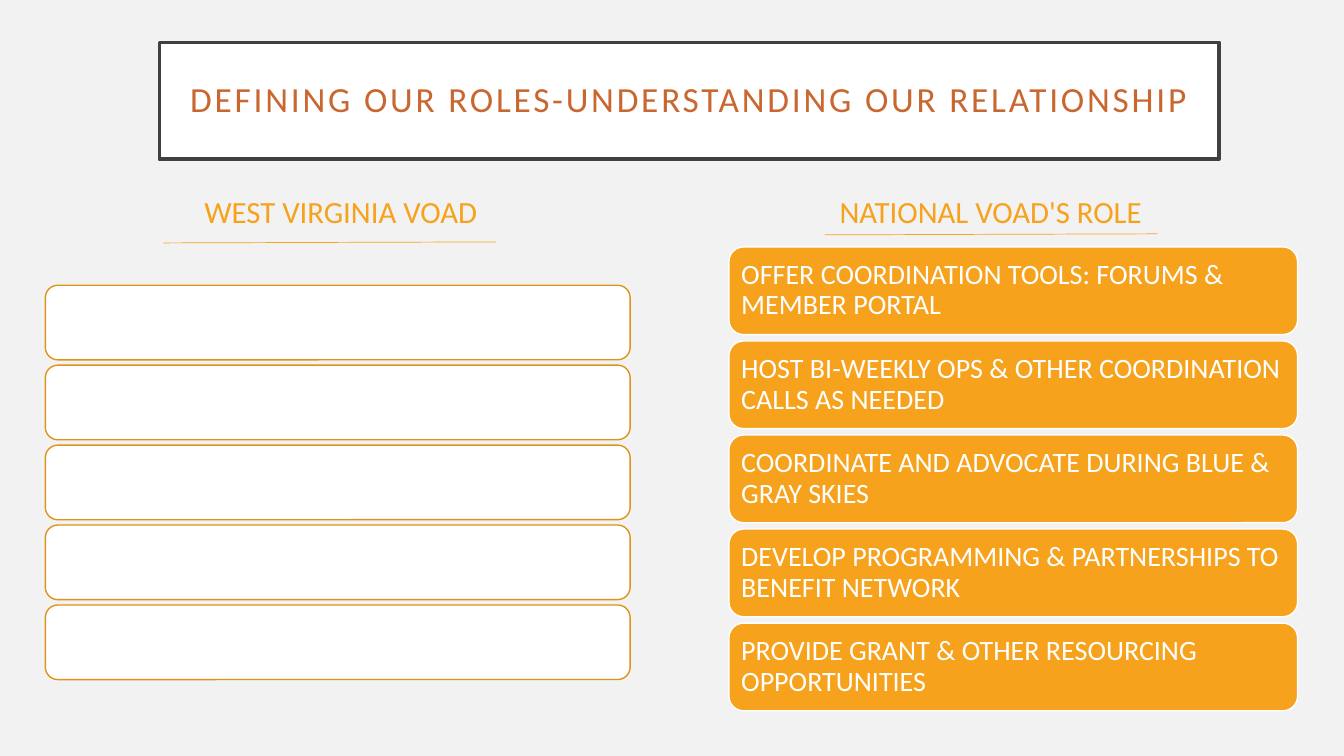
from dataclasses import dataclass

from lxml.etree import SubElement
from pptx import Presentation
from pptx.dml.color import RGBColor
from pptx.enum.shapes import MSO_CONNECTOR, MSO_SHAPE
from pptx.enum.text import MSO_ANCHOR, PP_ALIGN
from pptx.oxml.ns import qn
from pptx.util import Inches, Pt


@dataclass(frozen=True)
class Theme:
    font: str = "Calibri"
    background: RGBColor = RGBColor(0xF2, 0xF2, 0xF2)
    white: RGBColor = RGBColor(0xFF, 0xFF, 0xFF)
    frame: RGBColor = RGBColor(0x40, 0x40, 0x40)
    rust: RGBColor = RGBColor(0xC9, 0x67, 0x31)
    orange: RGBColor = RGBColor(0xF6, 0xA2, 0x1D)
    outline: RGBColor = RGBColor(0xDF, 0x93, 0x1A)
    title_size: float = 25.2
    heading_size: float = 22
    role_size: float = 20


THEME = Theme()
ROLE_COUNT = 5
NATIONAL_ROLES = [
    "OFFER COORDINATION TOOLS: FORUMS & MEMBER PORTAL",
    "HOST BI-WEEKLY OPS & OTHER COORDINATION CALLS AS NEEDED",
    "COORDINATE AND ADVOCATE DURING BLUE & GRAY SKIES",
    "DEVELOP PROGRAMMING & PARTNERSHIPS TO BENEFIT NETWORK",
    "PROVIDE GRANT & OTHER RESOURCING OPPORTUNITIES",
]


def add_box(slide, kind, left, top, width, height, fill, line, line_width):
    shape = slide.shapes.add_shape(
        kind, Inches(left), Inches(top), Inches(width), Inches(height))
    shape.shadow.inherit = False
    shape.fill.solid()
    shape.fill.fore_color.rgb = fill
    shape.line.color.rgb = line
    shape.line.width = Pt(line_width)
    return shape


def write_text(shape, text, size, color, alignment, anchor, inset=None, line_spacing=None):
    frame = shape.text_frame
    frame.word_wrap = True
    frame.vertical_anchor = anchor
    if inset is not None:
        frame.margin_left = frame.margin_right = Inches(inset)
        frame.margin_top = frame.margin_bottom = Inches(inset)
    paragraph = frame.paragraphs[0]
    paragraph.alignment = alignment
    if line_spacing is not None:
        paragraph.line_spacing = line_spacing
    run = paragraph.add_run()
    run.text = text
    run.font.name = THEME.font
    run.font.size = Pt(size)
    run.font.color.rgb = color
    return run


def add_title(slide, text):
    box = add_box(slide, MSO_SHAPE.RECTANGLE, 1.58, 0.42, 10.51, 1.16,
                  THEME.white, THEME.frame, 2.5)
    run = write_text(box, text, THEME.title_size, THEME.rust, PP_ALIGN.CENTER,
                     MSO_ANCHOR.MIDDLE, inset=0.2, line_spacing=0.9)
    run.font._element.set("spc", "200")


def add_heading(slide, text, left, width):
    box = slide.shapes.add_textbox(
        Inches(left), Inches(1.43), Inches(width), Inches(0.9))
    write_text(box, text, THEME.heading_size, THEME.orange, PP_ALIGN.CENTER,
               MSO_ANCHOR.BOTTOM)


def add_underline(slide, left, top):
    """Draw a thin rule that rises slightly to the right."""
    line = slide.shapes.add_connector(
        MSO_CONNECTOR.STRAIGHT, Inches(left), Inches(top),
        Inches(left + 3.3), Inches(top - 0.01))
    line.line.color.rgb = THEME.orange
    line.line.width = Pt(0.5)
    SubElement(line._element.spPr, qn("a:effectLst"))


def add_blank_roles(slide):
    for index in range(ROLE_COUNT):
        add_box(slide, MSO_SHAPE.ROUNDED_RECTANGLE, 0.45, 2.83 + index * 0.793,
                5.8, 0.74, THEME.white, THEME.outline, 1)


def add_national_roles(slide):
    for index, role in enumerate(NATIONAL_ROLES):
        box = add_box(slide, MSO_SHAPE.ROUNDED_RECTANGLE, 7.23, 2.45 + index * 0.933,
                      5.64, 0.87, THEME.orange, THEME.white, 1)
        write_text(box, role, THEME.role_size, THEME.white, PP_ALIGN.LEFT,
                   MSO_ANCHOR.MIDDLE, inset=0.08, line_spacing=0.9)


def main():
    presentation = Presentation()
    presentation.slide_width = Inches(13.33)
    presentation.slide_height = Inches(7.5)
    slide = presentation.slides.add_slide(presentation.slide_layouts[6])
    slide.background.fill.solid()
    slide.background.fill.fore_color.rgb = THEME.background

    add_title(slide, "DEFINING OUR ROLES-UNDERSTANDING OUR RELATIONSHIP")
    add_heading(slide, "WEST VIRGINIA VOAD", 0.56, 5.64)
    add_heading(slide, "NATIONAL VOAD'S ROLE", 6.99, 5.67)
    add_blank_roles(slide)
    add_national_roles(slide)
    add_underline(slide, 1.62, 2.41)
    add_underline(slide, 8.18, 2.33)
    presentation.save("out.pptx")


if __name__ == "__main__":
    main()
